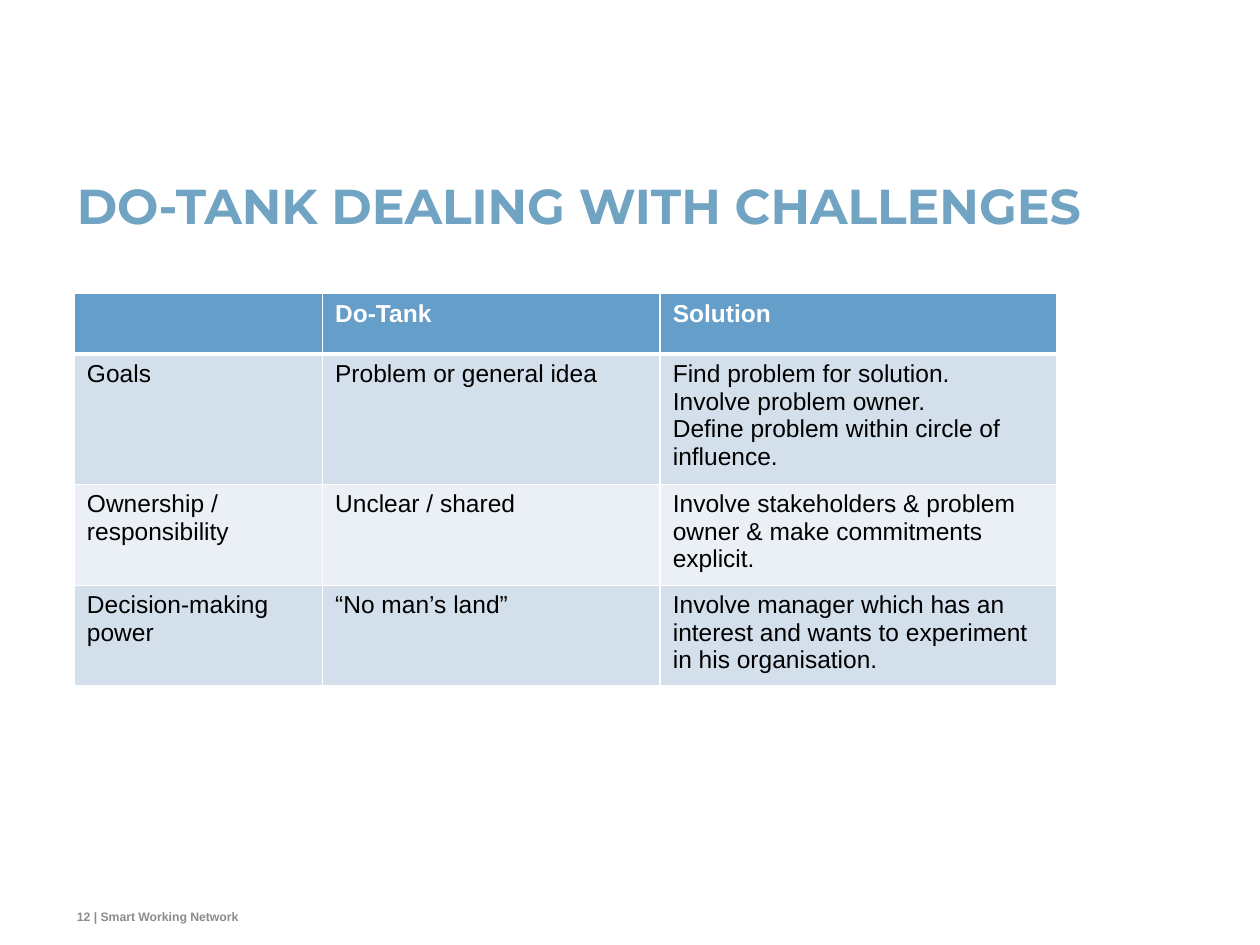
import pptx
import pptx.dml.color
import pptx.enum.text
import pptx.oxml.ns
import pptx.util
from dataclasses import dataclass
from lxml import etree

Inches = pptx.util.Inches
Pt = pptx.util.Pt
RGB = pptx.dml.color.RGBColor.from_string
Anchor = pptx.enum.text.MSO_ANCHOR


@dataclass(frozen=True)
class Theme:
    title_font: str = "Montserrat"
    body_font: str = "Arial"
    title_size: int = 28
    table_size: int = 14
    footer_size: int = 7
    title_color: str = "71A4C3"
    footer_color: str = "8C8C8C"
    header_fill: str = "649EC9"
    band_fills: tuple = ("D3DFEB", "EAF0F5")
    white: str = "FFFFFF"
    black: str = "000000"
    thin_line: int = 1
    thick_line: int = 3


THEME = Theme()

COLUMN_WIDTHS = (1.97, 2.68, 3.15)
ROW_HEIGHTS = (0.48, 0.97, 0.75, 0.75)
# Each cell is a list of paragraphs
ROWS = (
    ([], ["Do-Tank"], ["Solution"]),
    (["Goals"], ["Problem or general idea"],
     ["Find problem for solution.", "Involve problem owner.",
      "Define problem within circle of influence."]),
    (["Ownership / responsibility"], ["Unclear / shared"],
     ["Involve stakeholders & problem owner & make commitments explicit."]),
    (["Decision-making power"], ["“No man’s land”"],
     ["Involve manager which has an interest and wants to experiment in his organisation."]),
)


def add_span(para, text, font, size, color, bold):
    span = para.add_run()
    span.text = text
    span.font.name = font
    span.font.size = Pt(size)
    span.font.bold = bold
    span.font.color.rgb = RGB(color)


def add_line_of_text(page, area, text, font, size, color, anchor):
    box = page.shapes.add_textbox(*map(Inches, area))
    frame = box.text_frame
    frame.word_wrap = True
    frame.vertical_anchor = anchor
    frame.margin_left = frame.margin_right = 0
    frame.margin_top = frame.margin_bottom = 0
    para = frame.paragraphs[0]
    add_span(para, text, font, size, color, True)
    return para


def set_borders(cell, widths):
    """Draw white borders; widths are in points, for left, right, top, bottom."""
    properties = cell._tc.get_or_add_tcPr()
    qn = pptx.oxml.ns.qn
    for side, width in zip("LRTB", widths):
        line = etree.SubElement(properties, qn(f"a:ln{side}"), w=str(Pt(width)))
        fill = etree.SubElement(line, qn("a:solidFill"))
        etree.SubElement(fill, qn("a:srgbClr"), val=THEME.white)


def fill_cell(cell, texts, row_index):
    is_header = row_index == 0
    thin, thick = THEME.thin_line, THEME.thick_line
    set_borders(cell, (thin, thin,
                       thick if row_index == 1 else thin,
                       thick if is_header else thin))
    band = THEME.band_fills[(row_index - 1) % 2]
    cell.fill.solid()
    cell.fill.fore_color.rgb = RGB(THEME.header_fill if is_header else band)
    frame = cell.text_frame
    for index, text in enumerate(texts):
        para = frame.add_paragraph() if index else frame.paragraphs[0]
        add_span(para, text, THEME.body_font, THEME.table_size,
                 THEME.white if is_header else THEME.black, is_header)


def add_challenge_table(page, left, top):
    frame = page.shapes.add_table(
        len(ROWS), len(COLUMN_WIDTHS), Inches(left), Inches(top),
        Inches(sum(COLUMN_WIDTHS)), Inches(sum(ROW_HEIGHTS)))
    table = frame.table
    for column, width in zip(table.columns, COLUMN_WIDTHS):
        column.width = Inches(width)
    for row_index, (row, height) in enumerate(zip(table.rows, ROW_HEIGHTS)):
        row.height = Inches(height)
        for cell, texts in zip(row.cells, ROWS[row_index]):
            fill_cell(cell, texts, row_index)


def main():
    deck = pptx.Presentation()
    deck.slide_width, deck.slide_height = Inches(10), Inches(7.5)
    page = deck.slides.add_slide(deck.slide_layouts[6])

    # Title
    title = add_line_of_text(
        page, (0.61, 1.47, 8.81, 0.79), "DO-TANK DEALING WITH CHALLENGES",
        THEME.title_font, THEME.title_size, THEME.title_color, Anchor.TOP)
    title.line_spacing = Pt(THEME.title_size)

    # Challenges and solutions
    add_challenge_table(page, 0.59, 2.33)

    # Footer
    add_line_of_text(
        page, (0.61, 7.14, 4.72, 0.19), "12 | Smart Working Network",
        THEME.body_font, THEME.footer_size, THEME.footer_color, Anchor.BOTTOM)

    deck.save("out.pptx")


if __name__ == "__main__":
    main()
